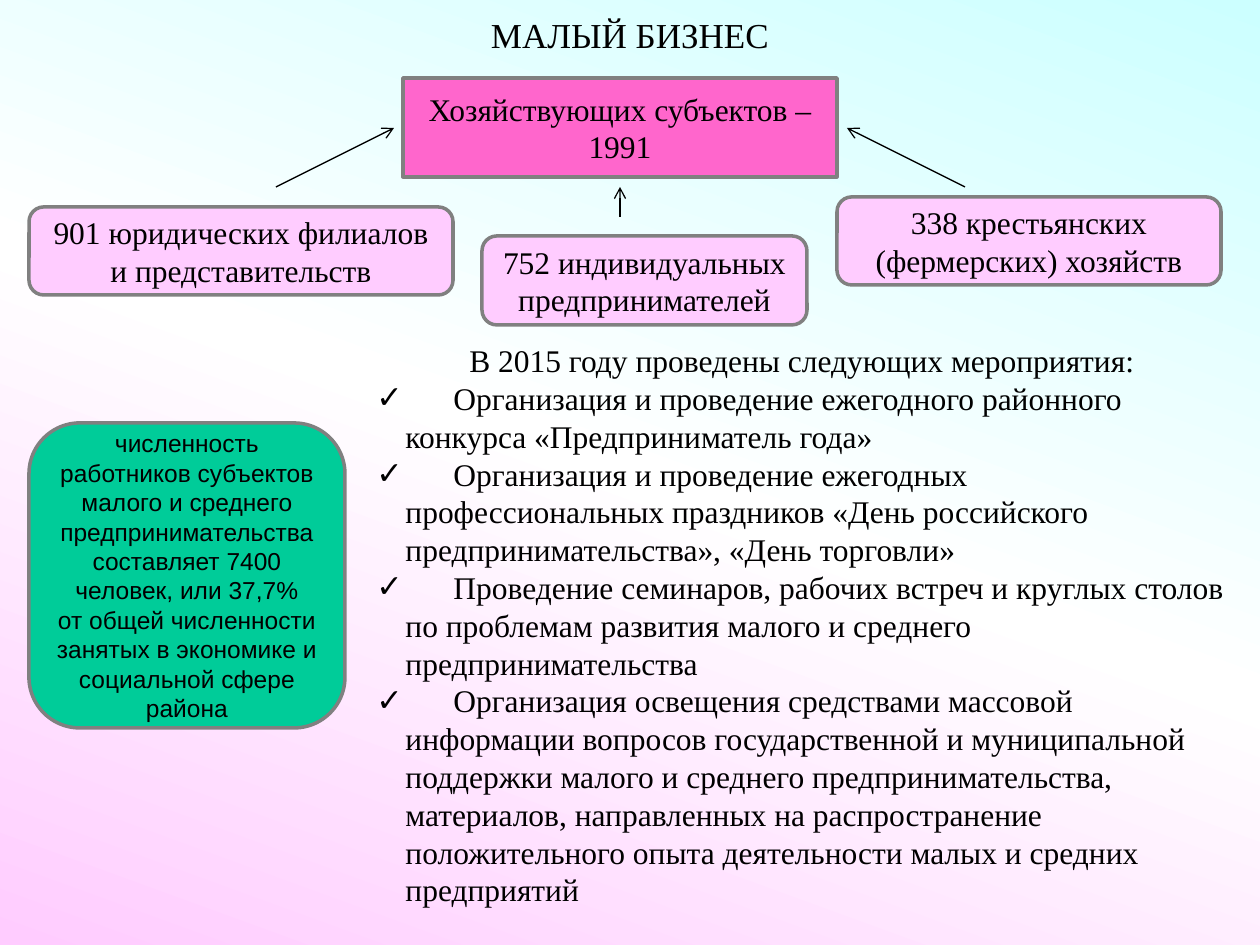
import lxml.etree
import copy
import pptx
import pptx.util
import pptx.dml.color
import pptx.enum.shapes
import pptx.enum.text
import pptx.oxml.ns

PX = 914400 / 126
SERIF, SANS = "Times New Roman", "Arial"
COLORS = {
    "ink": "000000", "border": "808080", "total": "FF66CC",
    "group": "FFCCFF", "staff": "00CC99",
    "sky": "CCFFFF", "white": "FFFFFF", "pink": "FFCCFF",
}
SHAPES = pptx.enum.shapes.MSO_SHAPE
ALIGN = pptx.enum.text.PP_ALIGN
ANCHOR = pptx.enum.text.MSO_ANCHOR


def emu(px):
    return pptx.util.Emu(round(px * PX))


def color(name):
    return pptx.dml.color.RGBColor.from_string(COLORS[name])


def add_xml(parent, tag, **attributes):
    return lxml.etree.SubElement(parent, pptx.oxml.ns.qn(tag), attributes)


class SlideBuilder:
    def __init__(self, slide):
        self.slide = slide

    def background(self, names, angle):
        """Fill the slide with evenly spaced gradient stops; angle is counter-clockwise."""
        fill = self.slide.background.fill
        fill.gradient()
        fill.gradient_angle = angle
        stop_list = next(self.slide.element.iter(pptx.oxml.ns.qn("a:gsLst")))
        while len(stop_list) < len(names):
            stop_list.append(copy.deepcopy(stop_list[0]))
        for index, (stop, name) in enumerate(zip(fill.gradient_stops, names)):
            stop.color.rgb = color(name)
            stop.position = index / (len(names) - 1)

    def style(self, paragraph, size, font, align):
        paragraph.alignment = align
        for run in paragraph.runs:
            run.font.size = pptx.util.Pt(size)
            run.font.name = font
            run.font.color.rgb = color("ink")

    def box(self, text, place, fill, size=18, font=SERIF, shape=SHAPES.ROUNDED_RECTANGLE):
        box = self.slide.shapes.add_shape(shape, *map(emu, place))
        box.shadow.inherit = False
        box.fill.solid()
        box.fill.fore_color.rgb = color(fill)
        box.line.color.rgb = color("border")
        box.line.width = pptx.util.Pt(2)
        frame = box.text_frame
        frame.word_wrap = True
        frame.vertical_anchor = ANCHOR.MIDDLE
        paragraph = frame.paragraphs[0]
        paragraph.text = text
        self.style(paragraph, size, font, ALIGN.CENTER)

    def text(self, text, place, size, anchor=ANCHOR.TOP):
        """Add a text box with a centred first paragraph and return its frame."""
        frame = self.slide.shapes.add_textbox(*map(emu, place)).text_frame
        frame.word_wrap = True
        frame.vertical_anchor = anchor
        frame.text = text
        self.style(frame.paragraphs[0], size, SERIF, ALIGN.CENTER)
        return frame

    def check_item(self, frame, text, hanging=29, first_line=77):
        """Add a ticked paragraph whose first line starts at a tab stop."""
        paragraph = frame.add_paragraph()
        paragraph.text = "\t" + text
        self.style(paragraph, 18, SERIF, ALIGN.LEFT)
        properties = paragraph._p.get_or_add_pPr()
        properties.set("marL", str(emu(hanging)))
        properties.set("indent", str(-emu(hanging)))
        add_xml(properties, "a:buFont", typeface=SANS)
        add_xml(properties, "a:buChar", char="✓")
        tabs = add_xml(properties, "a:tabLst")
        add_xml(tabs, "a:tab", pos=str(emu(first_line)), algn="l")

    def arrow(self, *ends):
        arrow = self.slide.shapes.add_connector(
            pptx.enum.shapes.MSO_CONNECTOR.STRAIGHT, *map(emu, ends))
        arrow.line.color.rgb = color("ink")
        arrow.line.width = pptx.util.Pt(0.75)
        add_xml(arrow.line._get_or_add_ln(), "a:tailEnd", type="arrow")
        add_xml(arrow._element.spPr, "a:effectLst")


def main():
    deck = pptx.Presentation()
    deck.slide_width, deck.slide_height = emu(1260), emu(945)
    builder = SlideBuilder(deck.slides.add_slide(deck.slide_layouts[6]))
    builder.background(["sky", "white", "pink"], 250)

    groups = [
        ("901 юридических филиалов и представительств", (29, 207, 424, 88)),
        ("752 индивидуальных предпринимателей", (482, 236, 325, 89)),
        ("338 крестьянских (фермерских) хозяйств", (837, 197, 384, 88)),
    ]
    for group, place in groups:
        builder.box(group, place, "group")
    builder.box("Хозяйствующих субъектов – 1991", (403, 78, 434, 99), "total",
                shape=SHAPES.RECTANGLE)
    builder.text("МАЛЫЙ БИЗНЕС", (0, 0, 1260, 69), 20, ANCHOR.MIDDLE)

    for ends in [(965, 187, 847, 128), (276, 187, 394, 128), (620, 217, 620, 187)]:
        builder.arrow(*ends)

    builder.box(
        "численность работников субъектов малого и среднего предпринимательства "
        "составляет 7400 человек, или 37,7%\vот общей численности занятых "
        "в экономике и социальной сфере района",
        (29, 423, 316, 305), "staff", 14, SANS)

    events = builder.text("В 2015 году проведены следующих мероприятия:",
                          (364, 335, 876, 584), 18)
    for event in [
        "Организация и проведение ежегодного районного конкурса «Предприниматель года»",
        "Организация и проведение ежегодных профессиональных праздников "
        "«День российского предпринимательства», «День торговли»",
        "Проведение семинаров, рабочих встреч и круглых столов по проблемам "
        "развития малого и среднего предпринимательства",
        "Организация освещения средствами массовой информации вопросов "
        "государственной и муниципальной поддержки малого и среднего "
        "предпринимательства, материалов, направленных на распространение "
        "положительного опыта деятельности малых и средних предприятий",
    ]:
        builder.check_item(events, event)

    deck.save("out.pptx")


if __name__ == "__main__":
    main()
